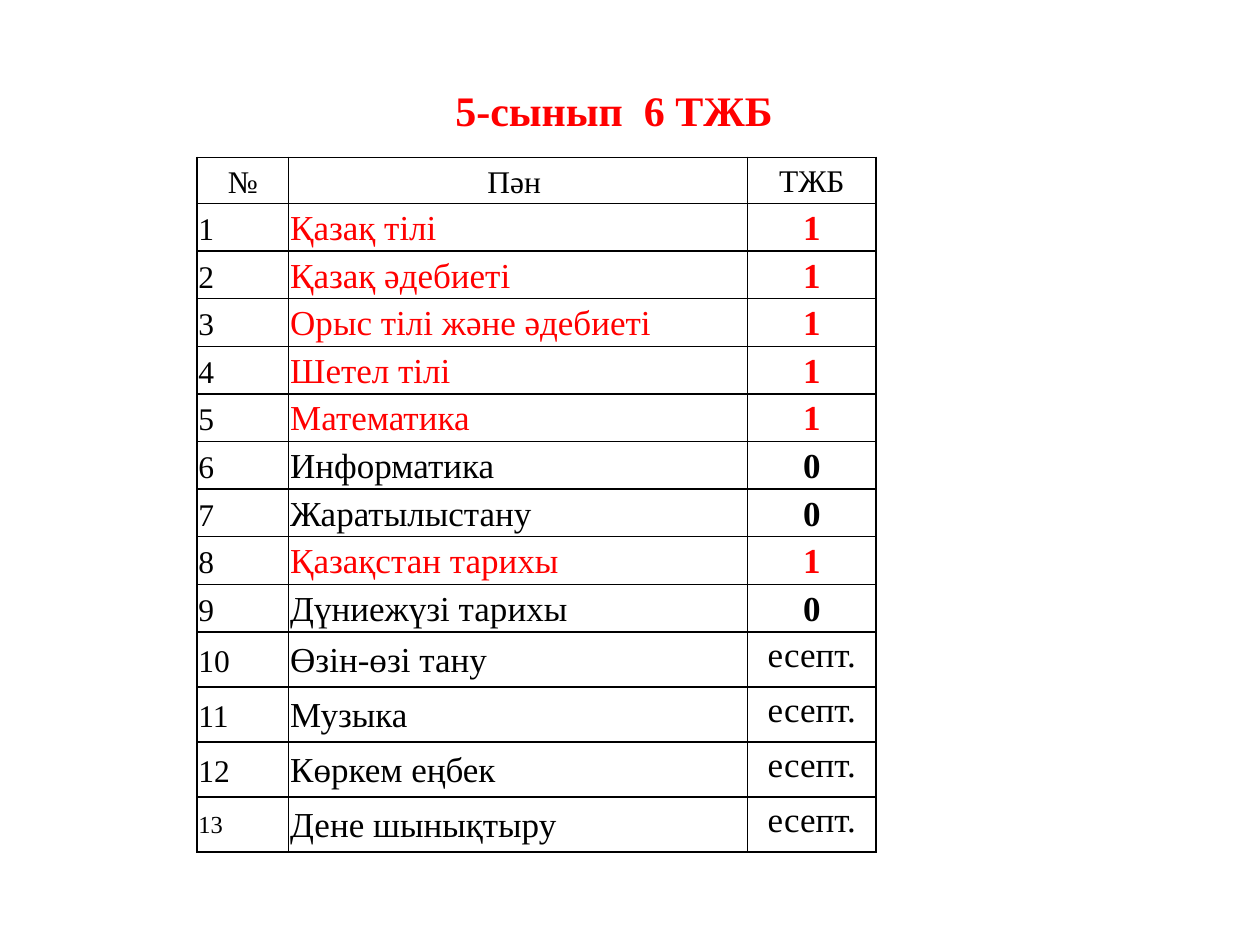
"""Build the slide listing the grade 5 subjects and their term assessments."""
import lxml.etree
import pptx
import pptx.dml.color
import pptx.enum.text
import pptx.oxml
import pptx.oxml.ns
import pptx.util

Cm = pptx.util.Cm
Pt = pptx.util.Pt
Align = pptx.enum.text.PP_ALIGN
Anchor = pptx.enum.text.MSO_ANCHOR

THEME = {
    "font": "Times New Roman",
    "black": pptx.dml.color.RGBColor(0x00, 0x00, 0x00),
    "red": pptx.dml.color.RGBColor(0xFF, 0x00, 0x00),
    "title": Pt(24),
    "subject": Pt(20),
    "label": Pt(18),
    "small": Pt(14),
}


def write(paragraph, text, size, color="black", bold=False, **layout):
    for name, value in layout.items():
        setattr(paragraph, name, value)
    run = paragraph.add_run()
    run.text = text
    font_format = {"name": THEME["font"], "size": THEME[size], "bold": bold}
    for name, value in font_format.items():
        setattr(run.font, name, value)
    run.font.color.rgb = THEME[color]


def outline(cell):
    properties = cell._tc.get_or_add_tcPr()
    for side in ("lnL", "lnR", "lnT", "lnB"):
        line = lxml.etree.SubElement(properties, pptx.oxml.ns.qn(f"a:{side}"), w=str(Pt(1)))
        fill = lxml.etree.SubElement(line, pptx.oxml.ns.qn("a:solidFill"))
        lxml.etree.SubElement(fill, pptx.oxml.ns.qn("a:srgbClr"), val=str(THEME["black"]))


presentation = pptx.Presentation()
presentation.slide_width = Cm(25.4)
presentation.slide_height = Cm(19.05)
slide = presentation.slides.add_slide(presentation.slide_layouts[6])

subjects = [
    ("Қазақ тілі", "1"),
    ("Қазақ әдебиеті", "1"),
    ("Орыс тілі және әдебиеті", "1"),
    ("Шетел тілі", "1"),
    ("Математика", "1"),
    ("Информатика", "0"),
    ("Жаратылыстану ", "0"),
    ("Қазақстан тарихы", "1"),
    ("Дүниежүзі тарихы", "0"),
    ("Өзін-өзі тану", "есепт."),
    ("Музыка", "есепт."),
    ("Көркем еңбек", "есепт."),
    ("Дене шынықтыру", "есепт."),
]

column_widths = [Cm(1.85), Cm(9.25), Cm(2.59)]
row_heights = [Cm(0.93)] + [Cm(0.96)] * 9 + [Cm(1.11)] * 4
table = slide.shapes.add_table(
    len(row_heights), len(column_widths),
    Cm(3.97), Cm(3.17), sum(column_widths), sum(row_heights),
).table
table.first_row = False
table.horz_banding = False
for column, width in zip(table.columns, column_widths):
    column.width = width
for row, height in zip(table.rows, row_heights):
    row.height = height

cell_format = {
    "margin_left": Cm(0.03),
    "margin_right": Cm(0.03),
    "margin_top": Cm(0.03),
    "margin_bottom": Cm(0.03),
    "vertical_anchor": Anchor.MIDDLE,
}
for cell in table.iter_cells():
    for name, value in cell_format.items():
        setattr(cell, name, value)
    outline(cell)
    cell.fill.background()

label_layout = {"line_spacing": 1.15, "space_after": Pt(1)}
for column, heading in enumerate(["№", "Пән ", "ТЖБ"]):
    paragraph = table.cell(0, column).text_frame.paragraphs[0]
    write(paragraph, heading, "label", alignment=Align.CENTER, **label_layout)
table.cell(0, 2).vertical_anchor = Anchor.TOP

for number, (subject, assessment) in enumerate(subjects, start=1):
    cells = [table.cell(number, column) for column in range(3)]
    number_paragraph, subject_paragraph, assessment_paragraph = [
        cell.text_frame.paragraphs[0] for cell in cells
    ]
    color = "red" if assessment == "1" else "black"
    is_last = number == len(subjects)
    number_layout = {"line_spacing": 1.07} if is_last else label_layout
    write(number_paragraph, str(number), "small" if is_last else "label",
          alignment=Align.JUSTIFY, **number_layout)
    write(subject_paragraph, subject, "subject", color,
          alignment=Align.JUSTIFY, line_spacing=1.07)
    write(assessment_paragraph, assessment, "subject", color, assessment.isdigit(),
          alignment=Align.CENTER, line_spacing=1.07)
    if not assessment.isdigit():
        cells[2].vertical_anchor = Anchor.TOP
        assessment_paragraph.space_after = Pt(8)

title = slide.shapes.add_textbox(Cm(8.93), Cm(1.57), Cm(7.19), Cm(1.27)).text_frame
title.word_wrap = False
title.auto_size = pptx.enum.text.MSO_AUTO_SIZE.SHAPE_TO_FIT_TEXT
write(title.paragraphs[0], "5-сынып  6 ТЖБ", "title", "red", True)

presentation.save("out.pptx")
